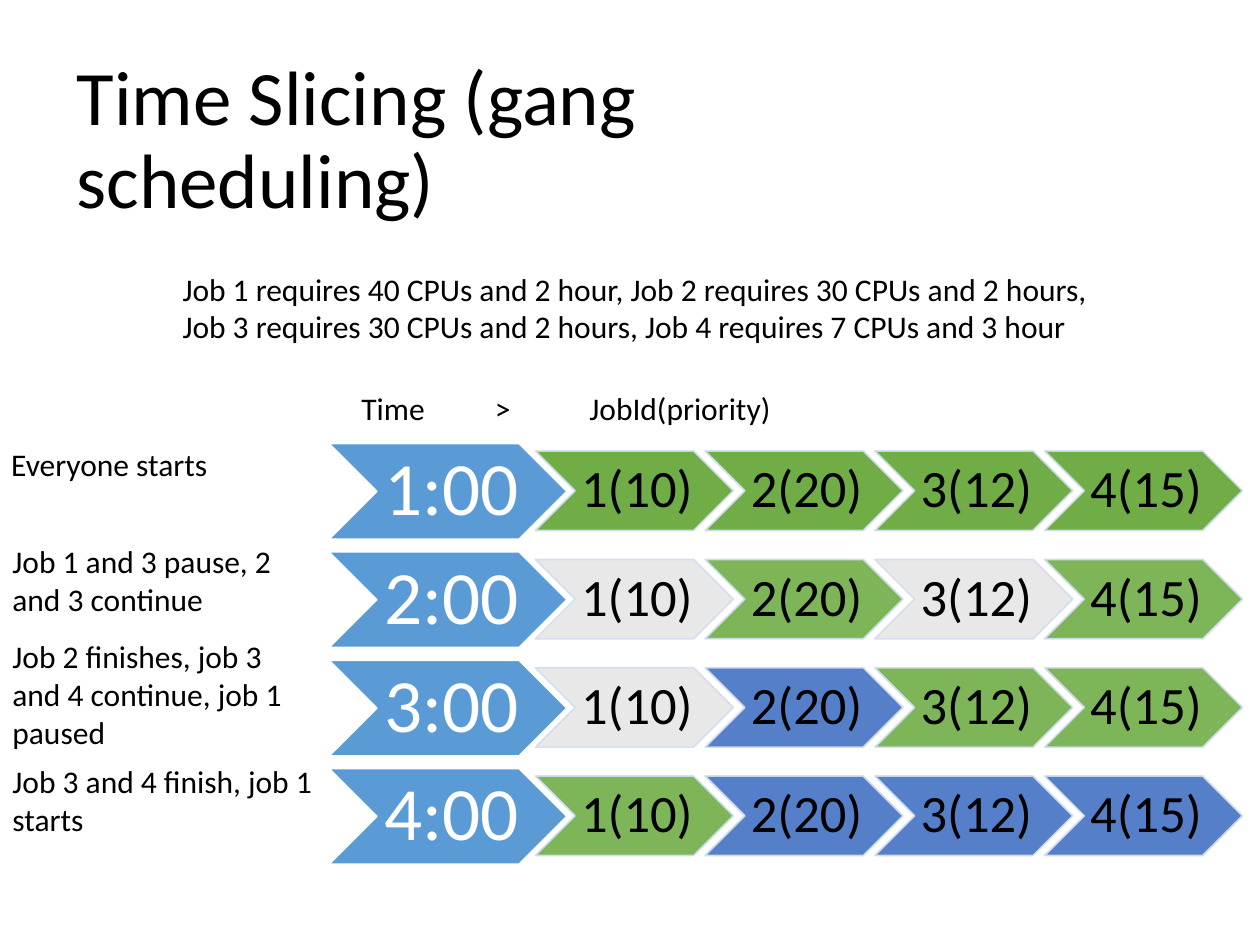
from lxml.etree import SubElement
from pptx import Presentation
from pptx.dml.color import RGBColor
from pptx.enum.shapes import MSO_SHAPE
from pptx.enum.text import MSO_ANCHOR, PP_ALIGN
from pptx.oxml.ns import qn
from pptx.util import Inches, Pt

BLACK = RGBColor(0x00, 0x00, 0x00)
WHITE = RGBColor(0xFF, 0xFF, 0xFF)
CLOCK_BLUE = RGBColor(0x5B, 0x9B, 0xD5)
RUNNING_GREEN = RGBColor(0x70, 0xAD, 0x47)
PAUSED_GREY = RGBColor(0xE7, 0xE6, 0xE6)
FINISHED_BLUE = RGBColor(0x44, 0x72, 0xC4)
PALE_BLUE = RGBColor(0xD2, 0xDE, 0xEF)

COLUMNS, ROWS = 100, 75
FIRST_ROW, ROW_STEP = 35.2, 8.6
FIRST_JOB, JOB_STEP = 42.5, 13.47
JOBS = ["1(10)", "2(20)", "3(12)", "4(15)"]
STATES = {"R": RUNNING_GREEN, "P": PAUSED_GREY, "F": FINISHED_BLUE}
SCHEDULE = [
    ("1:00", "RRRR", 100, (-0.1, 34.8, 26.1, 4), "Everyone starts"),
    ("2:00", "PRPR", 90, (0, 42.5, 26.1, 7.1), "Job 1 and 3 pause, 2 and 3 continue"),
    ("3:00", "PFRR", 90, (0, 50.1, 26.1, 10.1),
     "Job 2 finishes, job 3 and 4 continue, job 1 paused"),
    ("4:00", "RFFF", 90, (0, 60, 26.1, 7.1), "Job 3 and 4 finish, job 1 starts"),
]


class SlideBuilder:
    """Holds the slide, its grid and the text style, and adds each kind of element."""

    def __init__(self, presentation):
        self.column = presentation.slide_width / COLUMNS
        self.row = presentation.slide_height / ROWS
        self.slide = presentation.slides.add_slide(presentation.slide_layouts[6])
        self.font = {"name": "Calibri", "size": Pt(18)}

    def place(self, left, top, width, height):
        return (int(left * self.column), int(top * self.row),
                int(width * self.column), int(height * self.row))

    def apply(self, target, values):
        for name, value in values.items():
            setattr(target, name, value)

    def add_lines(self, frame, lines, font, layout, tabs=(), color=BLACK):
        for index, line in enumerate(lines):
            paragraph = frame.paragraphs[0] if index == 0 else frame.add_paragraph()
            paragraph.text = line
            self.apply(paragraph, layout)
            if tabs:
                stops = SubElement(paragraph._p.get_or_add_pPr(), qn("a:tabLst"))
                for position in tabs:
                    SubElement(stops, qn("a:tab"), algn="l",
                               pos=str(int(position * self.column)))
            for run in paragraph.runs:
                self.apply(run.font, self.font | font)
                run.font.color.rgb = color

    def text(self, area, *lines, font={}, layout={}, tabs=(), **frame_format):
        frame = self.slide.shapes.add_textbox(*self.place(*area)).text_frame
        self.apply(frame, {"word_wrap": True} | frame_format)
        self.add_lines(frame, lines, font, layout, tabs)

    def paint(self, fill, parent, color, opacity):
        fill.solid()
        fill.fore_color.rgb = color
        if opacity < 100:
            element = parent.find(qn("a:solidFill")).find(qn("a:srgbClr"))
            SubElement(element, qn("a:alpha"), val=str(opacity * 1000))

    def chevron(self, area, label, size, color, text_color, line_color,
                inset, opacity=100, line_opacity=100):
        shape = self.slide.shapes.add_shape(MSO_SHAPE.CHEVRON, *self.place(*area))
        shape.shadow.inherit = False
        shape.line.width = Pt(1)
        properties = shape.element.spPr
        self.paint(shape.fill, properties, color, opacity)
        self.paint(shape.line.fill, properties.find(qn("a:ln")), line_color, line_opacity)
        self.apply(shape.text_frame, {
            "word_wrap": False, "vertical_anchor": MSO_ANCHOR.MIDDLE,
            "margin_left": Inches(inset), "margin_right": 0,
            "margin_top": Inches(inset / 2), "margin_bottom": Inches(inset / 2)})
        self.add_lines(shape.text_frame, [label], {"size": Pt(size)},
                       {"alignment": PP_ALIGN.CENTER, "line_spacing": 0.9},
                       color=text_color)


def main():
    presentation = Presentation()
    presentation.slide_width, presentation.slide_height = Inches(10), Inches(7.5)
    builder = SlideBuilder(presentation)

    builder.text((5.1, 4, 75.8, 14.5), "Time Slicing (gang scheduling)",
                 font={"size": Pt(44)}, layout={"line_spacing": 0.9},
                 vertical_anchor=MSO_ANCHOR.MIDDLE)
    builder.text((13.5, 20.9, 74.1, 7.1),
                 "Job 1 requires 40 CPUs and 2 hour, Job 2 requires 30 CPUs and 2 hours,",
                 "Job 3 requires 30 CPUs and 2 hours, Job 4 requires 7 CPUs and 3 hour",
                 word_wrap=False)
    builder.text((27.7, 30.4, 35, 4), "Time\t>\tJobId(priority)", tabs=(10.6, 18.1))

    for row, (time, states, opacity, area, note) in enumerate(SCHEDULE):
        top = FIRST_ROW + row * ROW_STEP
        builder.text(area, note)
        builder.chevron((26.1, top, 18.9, 7.6), time, 43, CLOCK_BLUE, WHITE, WHITE, 0.06)
        for index, (job, state) in enumerate(zip(JOBS, states)):
            builder.chevron((FIRST_JOB + index * JOB_STEP, top + 0.6, 15.7, 6.3),
                            job, 30, STATES[state], BLACK, PALE_BLUE, 0.04,
                            opacity, line_opacity=90)

    presentation.save("out.pptx")


if __name__ == "__main__":
    main()
